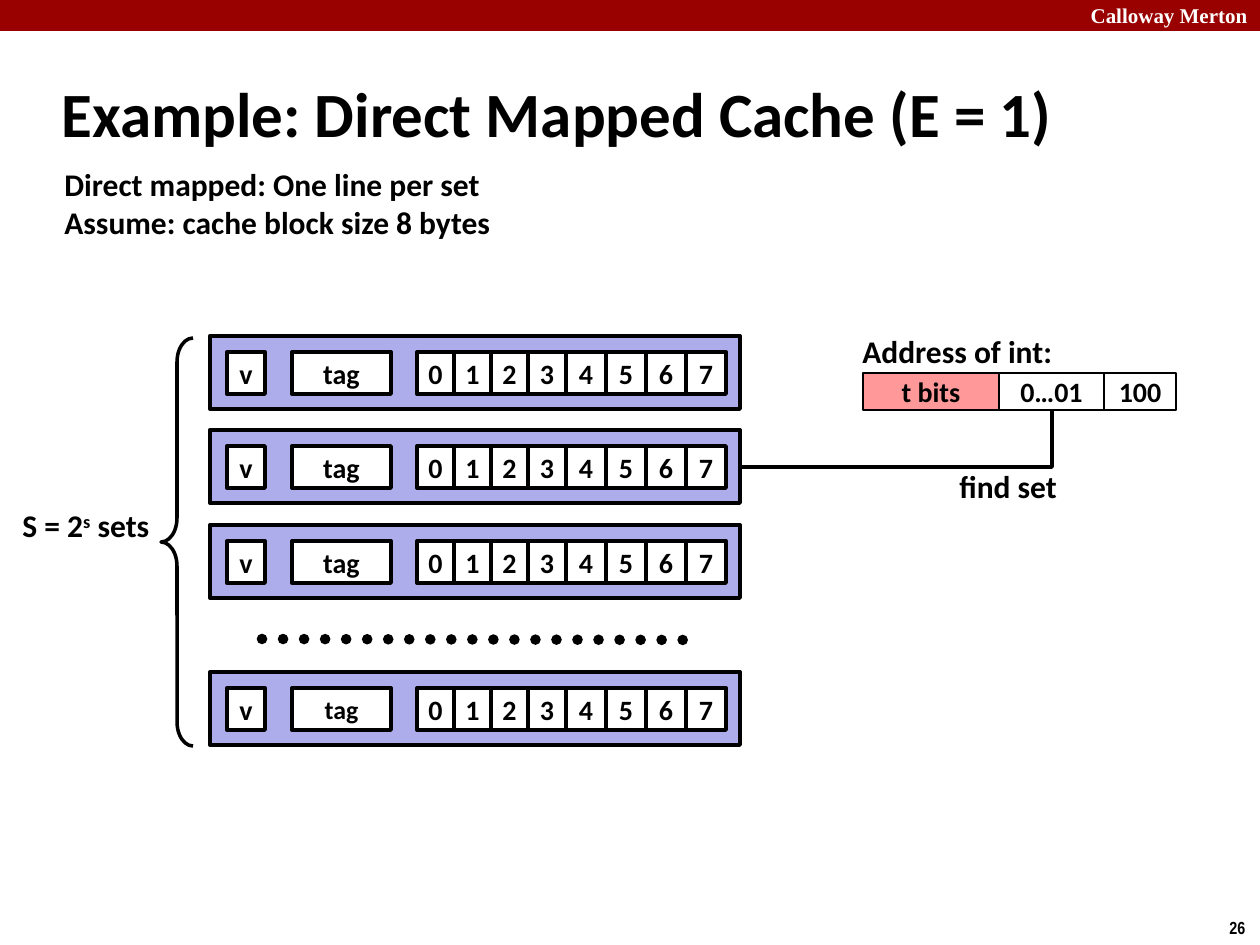
from lxml.etree import SubElement
from pptx import Presentation
from pptx.dml.color import RGBColor
from pptx.enum.dml import MSO_LINE
from pptx.enum.shapes import MSO_CONNECTOR, MSO_SHAPE
from pptx.enum.text import MSO_ANCHOR, MSO_AUTO_SIZE, PP_ALIGN
from pptx.oxml.ns import qn
from pptx.util import Emu, Pt

# Content
TITLE = "Example: Direct Mapped Cache (E = 1)"
LABELS = [  # left, top, width, height, lines
    (52, 159, 455, 89, ["Direct mapped: One line per set",
                        "Assume: cache block size 8 bytes"]),
    (850, 326, 217, 50, ["Address of int:"]),
    (947, 461, 123, 50, ["find set"]),
]
COUNT = [("S = 2", False), ("s", True), (" sets", False)]
BITS = [("t bits", 136, "pink"), ("0…01", 105, "white"), ("100", 72, "white")]
SETS = [(336, 16), (430, 16), (525, 16), (672, 14.8)]  # top, tag size
FLAGS = [("v", 227, 38), ("tag", 292, 99)]  # text, left, width
BYTES = [37, 37, 37, 38, 40, 40, 40, 40]  # widths
COLORS = {"black": "000000", "white": "FFFFFF", "red": "990000",
          "pink": "FF9999", "blue": "ADADEB"}
SCALE = 914400 / 126


def px(*vals):
    return [Emu(round(val * SCALE)) for val in vals]


def color(name):
    return RGBColor.from_string(COLORS[name])


def style(para, size, face="Calibri", tint="black", align=PP_ALIGN.LEFT):
    para.alignment = align
    font = para.font
    font.name, font.size, font.bold = face, Pt(size), True
    font.color.rgb = color(tint)


def label(box, lines, size=18, **look):
    frame = slide.shapes.add_textbox(*px(*box)).text_frame
    frame.word_wrap = False
    frame.text = "\n".join(lines)
    for para in frame.paragraphs:
        style(para, size, **look)
    return frame


def rect(box, fill, width, text="", size=16):
    shape = slide.shapes.add_shape(MSO_SHAPE.RECTANGLE, *px(*box))
    shape.shadow.inherit = False
    shape.fill.solid()
    shape.fill.fore_color.rgb = color(fill)
    if width:
        shape.line.color.rgb = color("black")
        shape.line.width = Pt(width)
    else:
        shape.line.fill.background()
    if text:
        frame = shape.text_frame
        frame.word_wrap = False
        frame.vertical_anchor = MSO_ANCHOR.MIDDLE
        frame.text = text
        style(frame.paragraphs[0], size, align=PP_ALIGN.CENTER)


def link(kind, ends, width):
    line = slide.shapes.add_connector(kind, *px(*ends))
    line.line.color.rgb = color("black")
    line.line.width = Pt(width)
    SubElement(line._element.spPr, qn("a:effectLst"))
    return line


deck = Presentation()
deck.slide_width, deck.slide_height = px(1260, 945)
slide = deck.slides.add_slide(deck.slide_layouts[5])

# Header bar and page number
rect((0, 0, 1260, 31), "red", 0)
label((1010, -4, 250, 38), ["Calloway Merton"], 12, face="Times New Roman",
      tint="white", align=PP_ALIGN.RIGHT)
label((1217, 911, 43, 34), ["26"], 10, face="Arial Narrow")

# Title
title = slide.shapes.title
title.left, title.top, title.width, title.height = px(49, 60, 1046, 105)
frame = title.text_frame
frame.auto_size = MSO_AUTO_SIZE.NONE
frame.vertical_anchor = MSO_ANCHOR.MIDDLE
frame.text = TITLE
style(frame.paragraphs[0], 36)

# Labels
for *box, lines in LABELS:
    label(box, lines)

# Number of sets, with brace
para = label((10, 500, 155, 50), [""]).paragraphs[0]
for text, raised in COUNT:
    run = para.add_run()
    run.text = text
    if raised:
        run._r.get_or_add_rPr().set("baseline", "30000")
brace = slide.shapes.add_shape(MSO_SHAPE.LEFT_BRACE, *px(161, 338, 32, 408))
brace.shadow.inherit = False
brace.fill.background()
brace.line.color.rgb = color("black")
brace.line.width = Pt(2)
brace.adjustments[0] = 0.75

# Address bits
left = 863
for text, width, fill in BITS:
    rect((left, 373, width, 37), fill, 1, text)
    left += width

# Cache sets
for top, size in SETS:
    rect((210, top, 530, 73), "blue", 2.25)
    for text, left, width in FLAGS:
        rect((left, top + 16, width, 42), "white", 2.25, text,
             size if text == "tag" else 16)
    left = 417
    for num, width in enumerate(BYTES):
        rect((left, top + 16, width, 42), "white", 2.25, str(num))
        left += width

# Dots for the sets left out
dots = link(MSO_CONNECTOR.STRAIGHT, (262, 639, 693, 640), 6)
dots.line.dash_style = MSO_LINE.ROUND_DOT
dots.line._get_or_add_ln().set("cap", "rnd")

# Elbow from set index to second set, turned by 90 degrees about its centre
right, top, left, low = 1052, 410, 741, 467
mid, half = (left + right) / 2, (right - left) / 2
rise, core = (low - top) / 2, (top + low) / 2
elbow = link(MSO_CONNECTOR.ELBOW,
             (mid - rise, core - half, mid + rise, core + half), 2)
props = elbow._element.spPr
props.find(qn("a:xfrm")).set("rot", "5400000")
props.find(qn("a:prstGeom")).set("prst", "bentConnector2")

deck.save("out.pptx")
